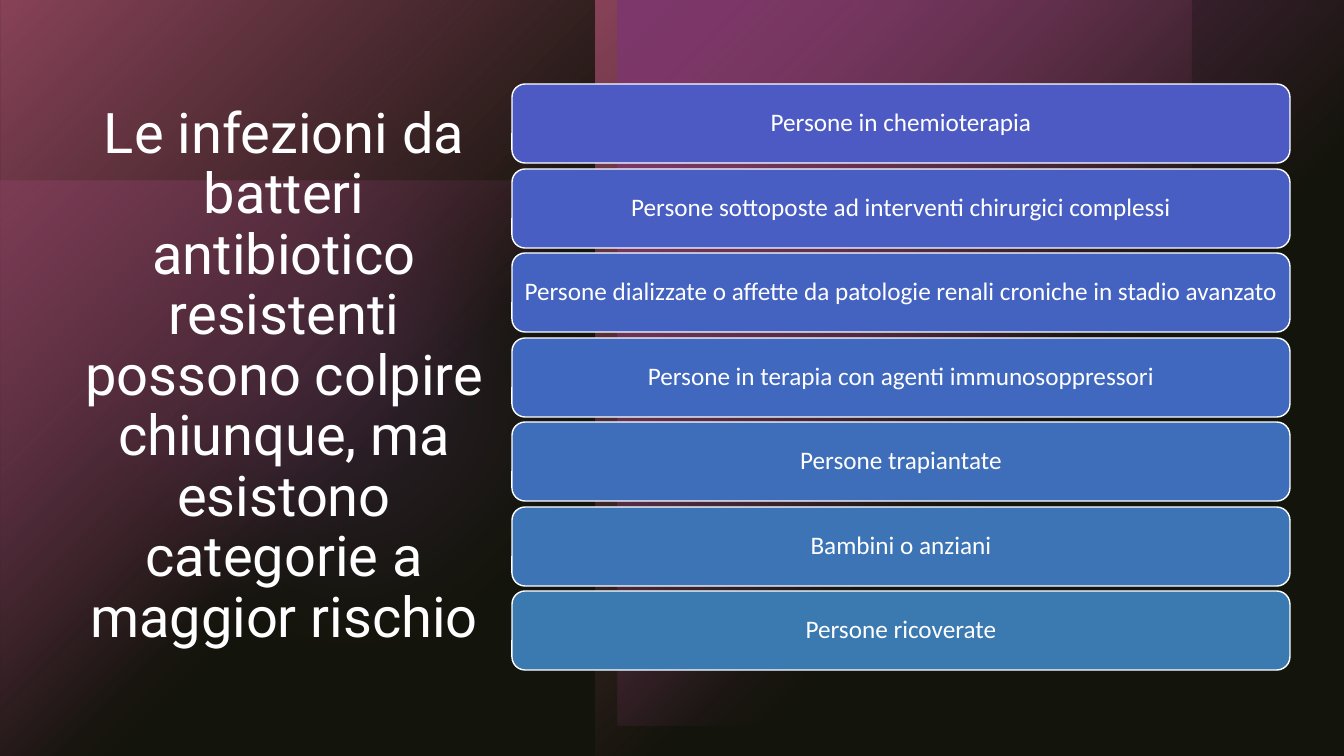
from lxml.etree import SubElement
from pptx import Presentation
from pptx.dml.color import RGBColor as RGB
from pptx.enum.shapes import MSO_SHAPE as Shape
from pptx.enum.text import MSO_ANCHOR as Anchor, PP_ALIGN as Align
from pptx.oxml.ns import qn
from pptx.util import Pt

BLACK = RGB(0x00, 0x00, 0x00)
WHITE = RGB(0xFF, 0xFF, 0xFF)
OLIVE = RGB(0x30, 0x32, 0x1C)
ROSE = RGB(0xC3, 0x4D, 0x81)
PLUM = RGB(0xB1, 0x3B, 0xA1)
VIOLET = RGB(0xA3, 0x4D, 0xC3)

TITLE = ("Le infezioni da batteri antibiotico resistenti possono colpire "
         "chiunque, ma esistono categorie a maggior rischio")
GROUPS = [
    ("Persone in chemioterapia", RGB(0x4D, 0x5A, 0xC3)),
    ("Persone sottoposte ad interventi chirurgici complessi", RGB(0x48, 0x5E, 0xC2)),
    ("Persone dializzate o affette da patologie renali croniche in stadio avanzato",
     RGB(0x44, 0x63, 0xC0)),
    ("Persone in terapia con agenti immunosoppressori", RGB(0x40, 0x68, 0xBE)),
    ("Persone trapiantate", RGB(0x3E, 0x6E, 0xBA)),
    ("Bambini o anziani", RGB(0x3D, 0x74, 0xB5)),
    ("Persone ricoverate", RGB(0x3B, 0x79, 0xB1)),
]


def px(n):
    return round(n * 914400 / 100.8)


class Deck:
    head = "Roboto"
    body = "Calibri"

    def __init__(self):
        self.prs = Presentation()
        self.prs.slide_width = px(1344)
        self.prs.slide_height = px(756)
        self.slide = self.prs.slides.add_slide(self.prs.slide_layouts[6])
        back = self.slide.background.fill
        back.solid()
        back.fore_color.rgb = BLACK

    def shape(self, kind, box, color):
        item = self.slide.shapes.add_shape(kind, *map(px, box))
        item.shadow.inherit = False
        item.fill.solid()
        item.fill.fore_color.rgb = color
        item.line.fill.background()
        return item

    def fade(self, item, alpha):
        tone = next(item._element.spPr.iter(qn("a:srgbClr")))
        SubElement(tone, qn("a:alpha"), val=str(alpha * 1000))

    def veil(self, box, color, alpha):
        self.fade(self.shape(Shape.RECTANGLE, box, color), alpha)

    def blur(self, box, color, alpha):
        item = self.shape(Shape.OVAL, box, color)
        self.fade(item, alpha)
        effect = item._element.spPr.find(qn("a:effectLst"))
        SubElement(effect, qn("a:softEdge"), rad=str(Pt(100)))

    def glow(self, box, color, alpha=100, turn=0, mirror=False):
        item = self.shape(Shape.RECTANGLE, box, color)
        item.rotation = turn
        frame = item._element.spPr.find(qn("a:xfrm"))
        frame.set("flipV", "1")
        if mirror:
            frame.set("flipH", "1")
        solid = item._element.spPr.find(qn("a:solidFill"))
        grad = solid.makeelement(qn("a:gradFill"), rotWithShape="1")
        stops = SubElement(grad, qn("a:gsLst"))
        for pos, level in ((0, alpha), (60, 0)):
            stop = SubElement(stops, qn("a:gs"), pos=str(pos * 1000))
            tone = SubElement(stop, qn("a:srgbClr"), val=str(color))
            SubElement(tone, qn("a:alpha"), val=str(level * 1000))
        round_off = SubElement(grad, qn("a:path"), path="circle")
        SubElement(round_off, qn("a:fillToRect"), r="100000", b="100000")
        solid.getparent().replace(solid, grad)

    def text(self, frame, words, font, size):
        frame.word_wrap = True
        frame.vertical_anchor = Anchor.MIDDLE
        para = frame.paragraphs[0]
        para.alignment = Align.CENTER
        para.line_spacing = 0.9
        run = para.add_run()
        run.text = words
        run.font.name = font
        run.font.size = Pt(size)
        run.font.color.rgb = WHITE

    def title(self, box, words):
        frame = self.slide.shapes.add_textbox(*map(px, box)).text_frame
        frame.margin_left = px(60)
        self.text(frame, words, self.head, 40)

    def card(self, box, words, color):
        item = self.shape(Shape.ROUNDED_RECTANGLE, box, color)
        item.line.color.rgb = WHITE
        item.line.width = Pt(1)
        frame = item.text_frame
        frame.margin_left = frame.margin_right = px(6)
        frame.margin_top = frame.margin_bottom = px(7)
        self.text(frame, words, self.body, 18)


def main():
    deck = Deck()
    deck.glow((0, 181, 575, 575), PLUM, alpha=60)
    deck.blur((634, 43, 476, 476), VIOLET, 60)
    deck.blur((0, 56, 700, 700), VIOLET, 20)
    deck.glow((0, 0, 596, 756), ROSE, turn=180)
    deck.glow((596, 0, 596, 756), ROSE, turn=180, mirror=True)
    deck.glow((618, 0, 726, 726), PLUM, turn=180)
    deck.veil((0, 0, 1344, 756), OLIVE, 40)
    deck.title((15, 53, 488, 648), TITLE)
    for i, (words, color) in enumerate(GROUPS):
        deck.card((512, 84 + (i * 169 + 1) // 2, 778, 79), words, color)
    deck.prs.save("out.pptx")


if __name__ == "__main__":
    main()
